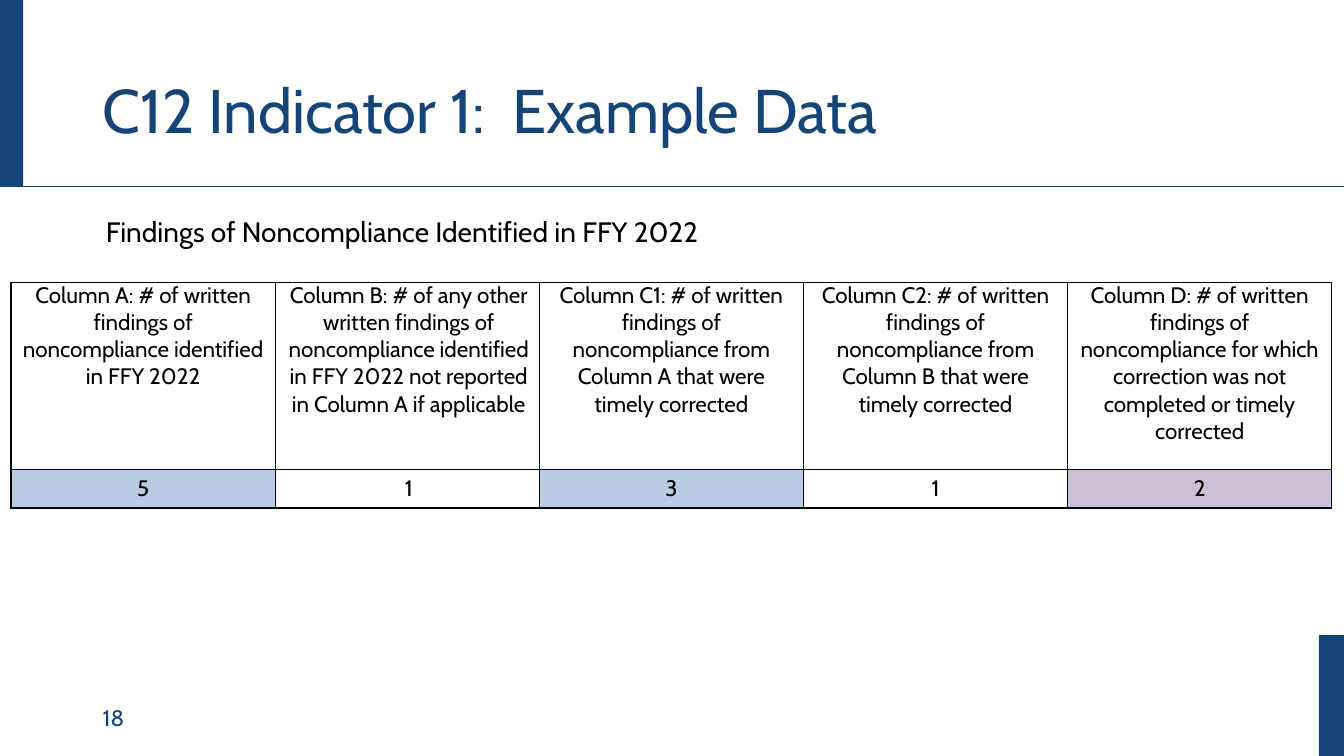
import pptx
import pptx.dml.color
import pptx.enum.shapes
import pptx.enum.text
import pptx.oxml
import pptx.oxml.ns
import pptx.util

Inches = pptx.util.Inches
Pt = pptx.util.Pt
RGBColor = pptx.dml.color.RGBColor
Align = pptx.enum.text.PP_ALIGN
Anchor = pptx.enum.text.MSO_ANCHOR

NAVY = RGBColor(0x15, 0x45, 0x78)
BLACK = RGBColor(0, 0, 0)
LIGHT_BLUE = RGBColor(0xB8, 0xCC, 0xE4)
LILAC = RGBColor(0xCC, 0xC0, 0xD9)
FONT = "Cabin"

TITLE = "C12 Indicator 1:  Example Data"
SUBTITLE = "Findings of Noncompliance Identified in FFY 2022"
PAGE_NUMBER = "18"
FINDINGS = [
    ("Column A: # of written findings of noncompliance identified in FFY 2022", "5", LIGHT_BLUE),
    ("Column B: # of any other written findings of noncompliance identified in FFY 2022 "
     "not reported in Column A if applicable", "1", None),
    ("Column C1: # of written findings of noncompliance from Column A that were timely corrected",
     "3", LIGHT_BLUE),
    ("Column C2: # of written findings of noncompliance from Column B that were timely corrected",
     "1", None),
    ("Column D: # of written findings of noncompliance for which correction was not "
     "completed or timely corrected", "2", LILAC),
]
INDENTED_COLUMN = 1
BARS = [(-0.02, 0, 0.25, 1.85), (13.08, 6.3, 0.25, 1.2)]
TABLE_LEFT, TABLE_TOP = 0.11, 2.8
COLUMN_WIDTH = 2.62
ROW_HEIGHTS = [1.86, 0.38]


def write_text(frame, text, size=16, color=BLACK, align=Align.LEFT, spacing=1.0, after=0):
    para = frame.paragraphs[0]
    para.alignment = align
    para.line_spacing = spacing
    para.space_before = Pt(0)
    para.space_after = Pt(after)
    span = para.add_run()
    span.text = text
    span.font.name = FONT
    span.font.size = Pt(size)
    span.font.color.rgb = color


def add_text(page, place, text, anchor=Anchor.MIDDLE, inset=None, **style):
    frame = page.shapes.add_textbox(*map(Inches, place)).text_frame
    frame.word_wrap = True
    frame.vertical_anchor = anchor
    if inset is not None:
        frame.margin_left = frame.margin_right = Inches(inset)
        frame.margin_top = frame.margin_bottom = Inches(inset)
    write_text(frame, text, **style)


def add_borders(cell):
    properties = cell._tc.get_or_add_tcPr()
    namespace = pptx.oxml.ns.nsdecls("a")
    for side in ("lnL", "lnR", "lnT", "lnB"):
        properties.append(pptx.oxml.parse_xml(
            f'<a:{side} {namespace} w="{Pt(1)}"><a:solidFill>'
            f'<a:srgbClr val="{BLACK}"/></a:solidFill></a:{side}>'))


def fill_cell(cell, text, color, anchor, left_inset, after):
    add_borders(cell)
    if color is None:
        cell.fill.background()
    else:
        cell.fill.solid()
        cell.fill.fore_color.rgb = color
    cell.margin_left, cell.margin_right = Inches(left_inset), Inches(0.1)
    cell.margin_top = cell.margin_bottom = 0
    cell.vertical_anchor = anchor
    write_text(cell.text_frame, text, align=Align.CENTER, after=after)


def add_findings_table(page):
    table = page.shapes.add_table(
        len(ROW_HEIGHTS), len(FINDINGS), Inches(TABLE_LEFT), Inches(TABLE_TOP),
        Inches(COLUMN_WIDTH * len(FINDINGS)), Inches(sum(ROW_HEIGHTS))).table
    table.first_row = table.horz_banding = False
    for row, height in zip(table.rows, ROW_HEIGHTS):
        row.height = Inches(height)
    for index, (heading, count, color) in enumerate(FINDINGS):
        table.columns[index].width = Inches(COLUMN_WIDTH)
        left_inset = 0.13 if index == INDENTED_COLUMN else 0.1
        fill_cell(table.cell(0, index), heading, None, Anchor.TOP, left_inset, 3)
        fill_cell(table.cell(1, index), count, color, Anchor.MIDDLE, left_inset, 3)


def add_frame(page):
    for place in BARS:
        bar = page.shapes.add_shape(
            pptx.enum.shapes.MSO_SHAPE.RECTANGLE, *map(Inches, place))
        bar.shadow.inherit = False
        bar.fill.solid()
        bar.fill.fore_color.rgb = NAVY
        bar.line.fill.background()
    rule = page.shapes.add_connector(
        pptx.enum.shapes.MSO_CONNECTOR.STRAIGHT, *map(Inches, (-0.02, 1.85, 13.33, 1.85)))
    rule.line.color.rgb = NAVY
    rule.line.width = Pt(0.5)
    rule._element.spPr.append(
        pptx.oxml.parse_xml(f'<a:effectLst {pptx.oxml.ns.nsdecls("a")}/>'))


def main():
    deck = pptx.Presentation()
    deck.slide_width, deck.slide_height = Inches(13.33), Inches(7.5)
    page = deck.slides.add_slide(deck.slide_layouts[6])
    add_frame(page)
    add_text(page, (0.92, 6.92, 3, 0.4), PAGE_NUMBER, color=NAVY)
    add_text(page, (0.92, 0.4, 11.5, 1.45), TITLE, size=44, color=NAVY, spacing=0.9)
    add_text(page, (0.92, 2, 11.5, 4.51), SUBTITLE, anchor=Anchor.TOP, inset=0.13, size=20)
    add_findings_table(page)
    deck.save("out.pptx")


if __name__ == "__main__":
    main()
